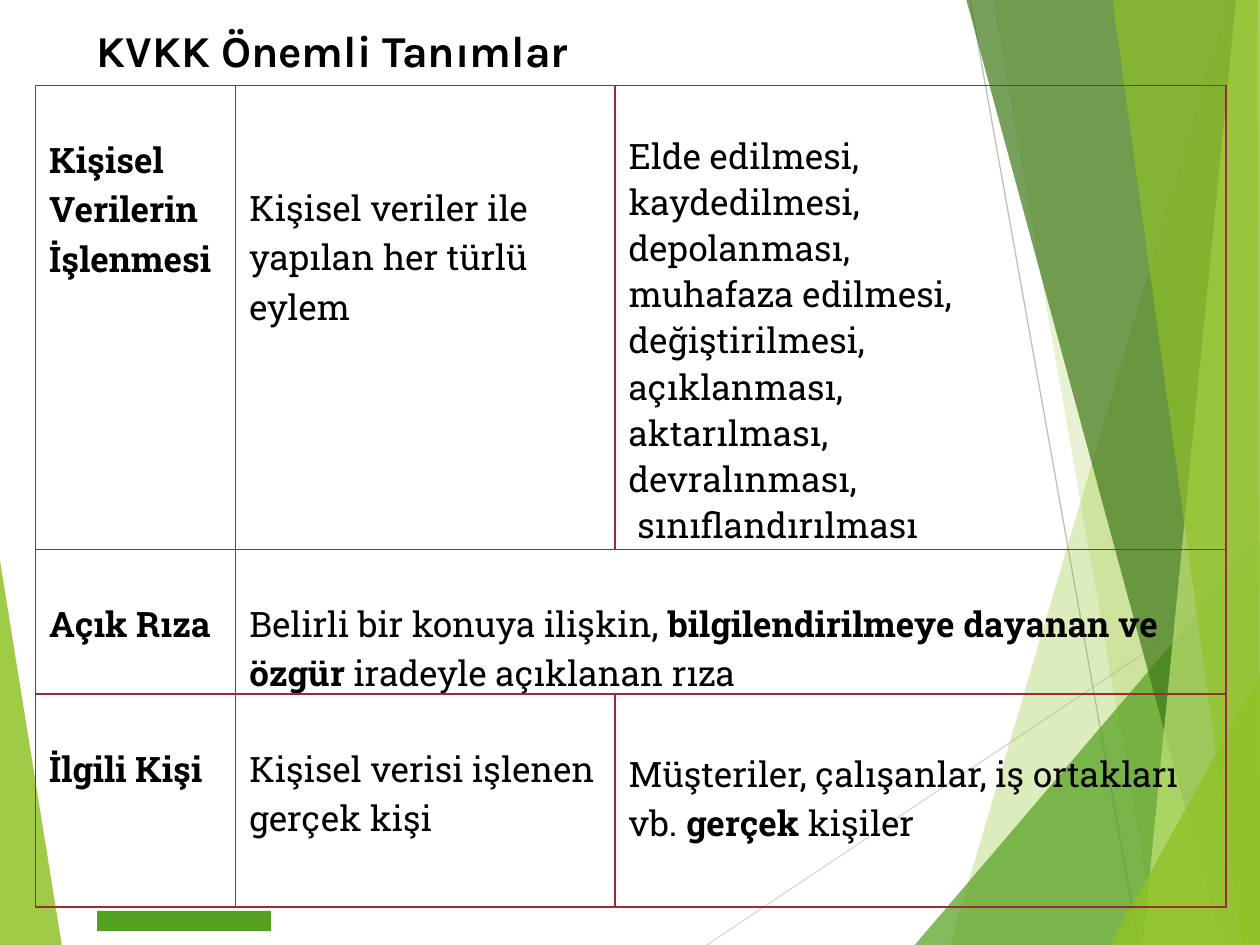
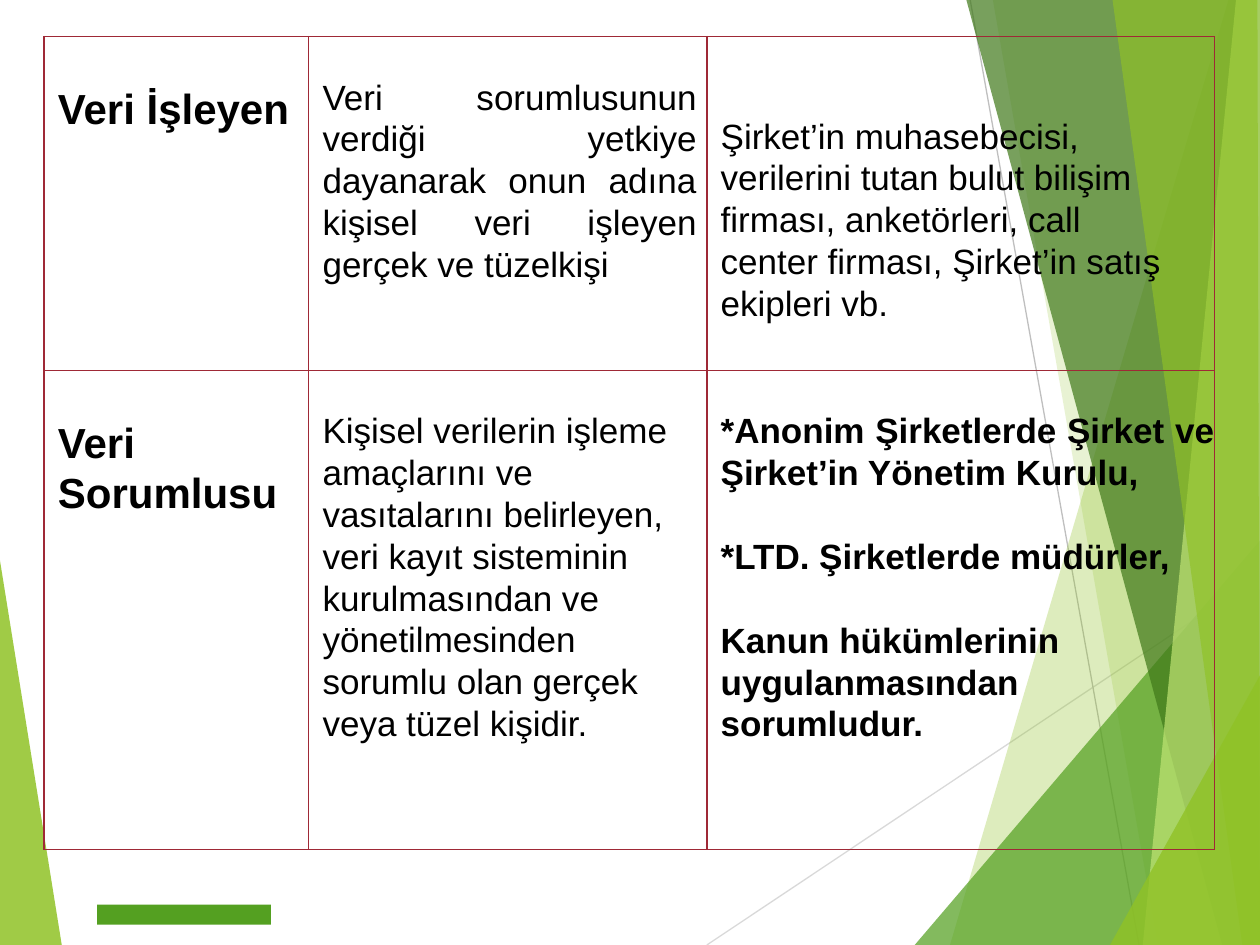
from dataclasses import dataclass
from itertools import cycle

from lxml import etree
from pptx import Presentation
from pptx.dml.color import RGBColor
from pptx.enum.shapes import MSO_CONNECTOR as Connector, MSO_SHAPE as Preset
from pptx.enum.text import MSO_ANCHOR as Anchor, PP_ALIGN as Align
from pptx.oxml.ns import qn
from pptx.util import Inches, Pt

BLACK = "000000"
LIME, GREEN, FOREST, PALE_LIME = "90C226", "54A021", "3F7819", "C0E474"
BORDER = "9F2936"
TITLE_FONT = "Karla"
LOOSE = 1.07

# Gap that one line of each face leaves above the text, in inches
SLAB_LINE, ARIAL_LINE, ARIAL_LARGE_LINE = 0.38, 0.31, 0.37

# Facets of the backdrop: colour, opacity in percent, outline
LEFT_FACET = (LIME, 85, [(0, 4.45), (0.49, 7.5), (0, 7.5)])
RIGHT_FACETS = [
    (LIME, 30, [(9.75, 0), (7.54, 7.5), (10, 7.5), (10, 0)]),
    (LIME, 20, [(7.88, 0), (9.19, 7.5), (10, 7.5), (10, 0)]),
    (GREEN, 72, [(7.26, 7.5), (10, 4.29), (10, 7.5)]),
    (FOREST, 70, [(7.67, 0), (9.7, 7.5), (10, 7.5), (10, 0)]),
    (PALE_LIME, 70, [(9.81, 0), (9.07, 7.5), (10, 7.5), (10, 0)]),
    (LIME, 65, [(8.83, 0), (9.86, 7.5), (10, 7.5), (9.98, 0)]),
    (LIME, 80, [(8.81, 7.5), (10, 5.36), (10, 7.5)]),
]
RAYS = [("D9D9D9", (5.61, 7.5), (10, 4.57)), ("BFBFBF", (7.7, 0), (9.04, 7.5))]


def rgb(hex_code):
    return RGBColor.from_string(hex_code)


@dataclass
class Entry:
    """Cell content; a paragraph is a string or a list of (text, bold) runs."""
    paragraphs: list
    gap_above: float
    bold: bool = False
    size: float = 20
    spacing: float = LOOSE
    paragraph_gap: float = 0
    aligns: tuple = (Align.LEFT,)
    span: int = 1
    right_margin: float = 0


class Deck:
    def __init__(self):
        self.presentation = Presentation()
        self.presentation.slide_width = Inches(10)
        self.presentation.slide_height = Inches(7.5)
        self.slide = None

    def new_slide(self):
        layout = self.presentation.slide_layouts[6]
        self.slide = self.presentation.slides.add_slide(layout)
        self.facet(*LEFT_FACET)
        for ray in RAYS:
            self.ray(*ray)
        for facet in RIGHT_FACETS:
            self.facet(*facet)

    def paint(self, shape, color):
        shape.shadow.inherit = False
        shape.line.fill.background()
        shape.fill.solid()
        shape.fill.fore_color.rgb = rgb(color)

    def facet(self, color, opacity, outline):
        points = [(Inches(x), Inches(y)) for x, y in outline]
        builder = self.slide.shapes.build_freeform(*points[0])
        builder.add_line_segments(points[1:], close=True)
        facet = builder.convert_to_shape()
        self.paint(facet, color)
        tint = facet.fill._xPr.find(".//" + qn("a:srgbClr"))
        etree.SubElement(tint, qn("a:alpha"), val=str(opacity * 1000))

    def ray(self, color, start, end):
        ray = self.slide.shapes.add_connector(
            Connector.STRAIGHT, *(Inches(v) for v in start + end))
        ray.line.color.rgb = rgb(color)
        ray.line.width = Pt(0.75)
        etree.SubElement(ray._element.spPr, qn("a:effectLst"))

    def run(self, paragraph, text, font, size, bold=True):
        run = paragraph.add_run()
        run.text = text
        run.font.name = font
        run.font.size = Pt(size)
        run.font.bold = bold
        run.font.color.rgb = rgb(BLACK)

    def title(self, text):
        box = self.slide.shapes.add_textbox(
            Inches(0.67), Inches(0.12), Inches(8.51), Inches(0.55))
        frame = box.text_frame
        frame.word_wrap = True
        frame.vertical_anchor = Anchor.MIDDLE
        self.run(frame.paragraphs[0], text, TITLE_FONT, 25.2)

    def footer(self, top):
        bar = self.slide.shapes.add_shape(
            Preset.RECTANGLE, Inches(0.77), Inches(top), Inches(1.38), Inches(0.16))
        self.paint(bar, GREEN)

    def borders(self, cell, top=1, bottom=1):
        properties = cell._tc.get_or_add_tcPr()
        sides = {"lnL": 1, "lnR": 1, "lnT": top, "lnB": bottom}
        for position, (side, width) in enumerate(sides.items()):
            line = etree.Element(qn("a:" + side), w=str(Pt(width)))
            fill = etree.SubElement(line, qn("a:solidFill"))
            etree.SubElement(fill, qn("a:srgbClr"), val=BORDER)
            properties.insert(position, line)

    def write_entry(self, cell, entry, font):
        cell.margin_top = Inches(entry.gap_above)
        cell.margin_right = Inches(entry.right_margin)
        frame = cell.text_frame
        for index, (content, align) in enumerate(
                zip(entry.paragraphs, cycle(entry.aligns))):
            paragraph = frame.add_paragraph() if index else frame.paragraphs[0]
            paragraph.alignment = align
            paragraph.line_spacing = entry.spacing
            if index:
                paragraph.space_before = Pt(entry.paragraph_gap)
            runs = [(content, entry.bold)] if isinstance(content, str) else content
            for text, bold in runs:
                self.run(paragraph, text, font, entry.size, bold)

    def definitions(self, left, top, widths, heights, rows, font, heavy_rule=None):
        """Draw the table; heavy_rule is the row that has a thicker top border."""
        table = self.slide.shapes.add_table(
            len(heights), len(widths), Inches(left), Inches(top),
            Inches(sum(widths)), Inches(sum(heights))).table
        table.first_row = table.horz_banding = False
        for column, width in zip(table.columns, widths):
            column.width = Inches(width)
        for row, height in zip(table.rows, heights):
            row.height = Inches(height)
        for row_index, entries in enumerate(rows):
            for column_index in range(len(widths)):
                cell = table.cell(row_index, column_index)
                cell.fill.background()
                cell.margin_left = Inches(0.11)
                cell.margin_right = cell.margin_top = cell.margin_bottom = 0
                self.borders(cell,
                             top=1.5 if row_index == heavy_rule else 1,
                             bottom=1.5 if row_index + 1 == heavy_rule else 1)
            for column_index, entry in enumerate(entries):
                cell = table.cell(row_index, column_index)
                if entry.span > 1:
                    cell.merge(table.cell(row_index, column_index + entry.span - 1))
                self.write_entry(cell, entry, font)


def processing_and_consent(deck):
    deck.new_slide()
    deck.title("KVKK Önemli Tanımlar")
    processing = [
        Entry(["Kişisel Verilerin İşlenmesi"], SLAB_LINE, bold=True),
        Entry(["Kişisel veriler ile yapılan her türlü eylem"], 2 * SLAB_LINE),
        Entry(["Elde edilmesi,", "kaydedilmesi,", "depolanması,",
               "muhafaza edilmesi,", "değiştirilmesi,", "açıklanması,",
               "aktarılması,", "devralınması,", " sınıflandırılması"],
              0.37, spacing=1.0),
    ]
    consent = [
        Entry(["Açık Rıza"], SLAB_LINE, bold=True),
        Entry([[("Belirli bir konuya ilişkin, ", False),
                ("bilgilendirilmeye dayanan ve özgür ", True),
                ("iradeyle açıklanan rıza", False)]], SLAB_LINE, span=2),
    ]
    data_subject = [
        Entry(["İlgili Kişi"], SLAB_LINE, bold=True),
        Entry(["Kişisel verisi işlenen gerçek kişi"], SLAB_LINE),
        Entry([[("Müşteriler, çalışanlar, iş ortakları vb. ", False),
                ("gerçek ", True), ("kişiler", False)]], SLAB_LINE + 0.04),
    ]
    deck.definitions(0.28, 0.68, [1.59, 3.01, 4.85], [3.68, 1.15, 1.69],
                     [processing, consent, data_subject], "Roboto Slab",
                     heavy_rule=2)
    deck.footer(7.23)


def processor_and_controller(deck):
    deck.new_slide()
    processor = [
        Entry(["Veri İşleyen"], ARIAL_LARGE_LINE, bold=True, size=24),
        Entry(["Veri sorumlusunun verdiği yetkiye dayanarak onun adına "
               "kişisel veri işleyen gerçek ve tüzelkişi"],
              ARIAL_LINE, aligns=(Align.JUSTIFY,), right_margin=0.08),
        Entry(["Şirket’in muhasebecisi, verilerini tutan bulut bilişim "
               "firması, anketörleri, call center firması, Şirket’in satış "
               "ekipleri vb."], 2 * ARIAL_LINE, right_margin=0.25),
    ]
    controller = [
        Entry(["Veri", "Sorumlusu"], ARIAL_LARGE_LINE, bold=True, size=24),
        Entry(["Kişisel verilerin işleme amaçlarını ve vasıtalarını "
               "belirleyen, veri kayıt sisteminin kurulmasından ve "
               "yönetilmesinden sorumlu olan gerçek veya tüzel kişidir."],
              ARIAL_LINE),
        Entry(["*Anonim Şirketlerde Şirket ve Şirket’in Yönetim Kurulu,",
               "*LTD. Şirketlerde müdürler,",
               "Kanun hükümlerinin uygulanmasından sorumludur."],
              ARIAL_LINE, bold=True, paragraph_gap=24,
              aligns=(Align.JUSTIFY, Align.JUSTIFY, Align.LEFT)),
    ]
    deck.definitions(0.35, 0.29, [2.1, 3.16, 4.03], [2.65, 3.8],
                     [processor, controller], "Arial")
    deck.footer(7.18)


def main():
    deck = Deck()
    processing_and_consent(deck)
    processor_and_controller(deck)
    deck.presentation.save("out.pptx")


if __name__ == "__main__":
    main()
